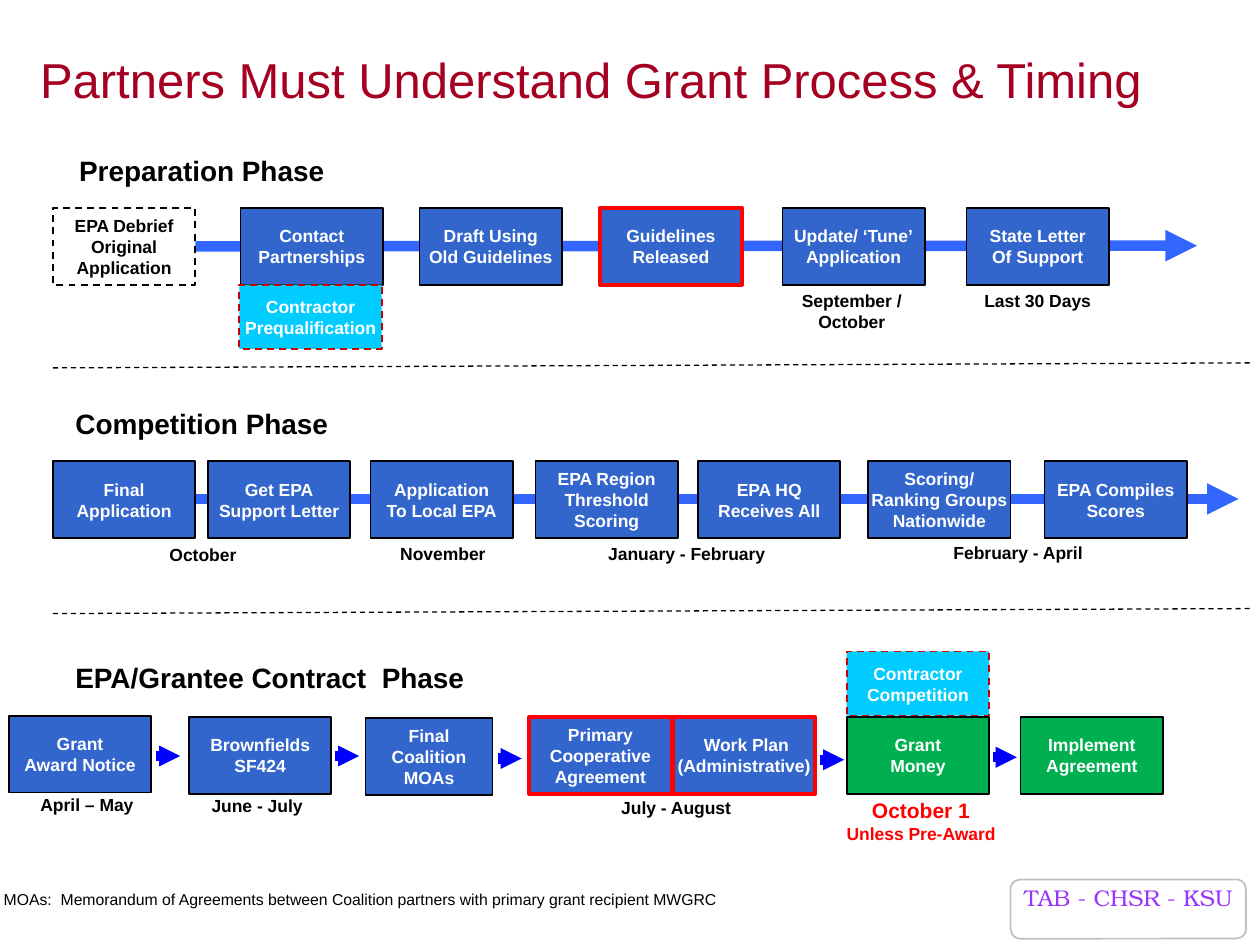
from pptx import Presentation
from pptx.dml.color import RGBColor
from pptx.enum.dml import MSO_LINE
from pptx.enum.shapes import MSO_CONNECTOR, MSO_SHAPE
from pptx.enum.text import MSO_ANCHOR, MSO_AUTO_SIZE, PP_ALIGN
from pptx.oxml.ns import qn
from pptx.util import Inches, Pt
from lxml.etree import SubElement

BLACK = RGBColor(0x00, 0x00, 0x00)
WHITE = RGBColor(0xFF, 0xFF, 0xFF)
BLUE = RGBColor(0x33, 0x66, 0xCC)
GREEN = RGBColor(0x00, 0xB0, 0x50)
CYAN = RGBColor(0x00, 0xCC, 0xFF)
RED = RGBColor(0xFF, 0x00, 0x00)
DARK_RED = RGBColor(0xCC, 0x00, 0x00)
CRIMSON = RGBColor(0xA5, 0x00, 0x21)
TIMELINE_BLUE = RGBColor(0x33, 0x66, 0xFF)
ARROW_BLUE = RGBColor(0x00, 0x00, 0xFF)
SILVER = RGBColor(0xC0, 0xC0, 0xC0)
PURPLE = RGBColor(0x99, 0x33, 0xFF)

deck = Presentation()
deck.slide_width, deck.slide_height = Inches(10), Inches(7.5)
page = deck.slides.add_slide(deck.slide_layouts[6])

# Grid of 100 columns by 75 rows
COLUMN = deck.slide_width / 100
ROW = deck.slide_height / 75


def write(shape, text, size, color, bold=True, align=PP_ALIGN.CENTER, font="Arial"):
    """Put text in a shape: \n starts a paragraph, \v breaks a line."""
    frame = shape.text_frame
    frame.word_wrap = False
    for number, paragraph_text in enumerate(text.split("\n")):
        para = frame.add_paragraph() if number else frame.paragraphs[0]
        para.alignment = align
        for part, words in enumerate(paragraph_text.split("\v")):
            if part:
                para.add_line_break()
            span = para.add_run()
            span.text = words
            span.font.name, span.font.size, span.font.bold = font, Pt(size), bold
            span.font.color.rgb = color
    return frame


def add_line(x1, y1, x2, y2, color, width, head="med"):
    """Draw a solid arrow with a head of the given size, or a dashed line without one."""
    line = page.shapes.add_connector(
        MSO_CONNECTOR.STRAIGHT, int(x1 * COLUMN), int(y1 * ROW), int(x2 * COLUMN), int(y2 * ROW))
    line.line.color.rgb, line.line.width = color, Pt(width)
    if head:
        SubElement(line.line._get_or_add_ln(), qn("a:tailEnd"), type="triangle", w=head, len=head)
    else:
        line.line.dash_style = MSO_LINE.DASH
    SubElement(line._element.spPr, qn("a:effectLst"))
    return line


# Footer frame
footer = page.shapes.add_shape(
    MSO_SHAPE.ROUNDED_RECTANGLE, int(80.2 * COLUMN), int(69.8 * ROW), int(18.7 * COLUMN), int(4.7 * ROW))
footer.shadow.inherit = False
footer.fill.solid()
footer.fill.fore_color.rgb = WHITE
footer.line.color.rgb, footer.line.width = SILVER, Pt(1)

# Timelines behind the steps, and phase dividers
preparation_line = add_line(15.5, 19.5, 95, 19.5, TIMELINE_BLUE, 6)
add_line(13.3, 39.6, 98.3, 39.6, TIMELINE_BLUE, 6)
for divider_row in (29.2, 48.7):
    add_line(4.2, divider_row, 99.2, divider_row - 0.4, BLACK, 0.75, head=None)

# Short arrows between contract steps
for arrow_column, arrow_row in ((12.4, 60), (26.6, 60), (39.5, 60.2), (65.1, 60.3), (78.8, 60.1)):
    add_line(arrow_column, arrow_row, arrow_column + 1.9, arrow_row, ARROW_BLUE, 6, head="sm")

# Steps: style gives fill, outline, outline width, dashed, text colour, height
STEP_WIDTH = 11.3
STYLES = {
    "debrief": (None, BLACK, 1, True, BLACK, 6.1),
    "step": (BLUE, BLACK, 1, False, WHITE, 6.1),
    "key": (BLUE, RED, 2.25, False, WHITE, 6.1),
    "award": (GREEN, BLACK, 1, False, WHITE, 6.1),
    "contractor": (CYAN, DARK_RED, 1, True, WHITE, 5.1),
}
STEPS = [
    # Preparation
    (4.2, 16.5, "debrief", "EPA Debrief\nOriginal\nApplication"),
    (19.1, 16.5, "step", "Contact\vPartnerships"),
    (33.3, 16.5, "step", "Draft Using\nOld Guidelines"),
    (47.6, 16.5, "key", "Guidelines\nReleased"),
    (62.1, 16.5, "step", "Update/ ‘Tune’\nApplication"),
    (76.7, 16.5, "step", "State Letter\nOf Support"),
    (19, 22.6, "contractor", "Contractor\nPrequalification"),
    # Competition
    (4.2, 36.6, "step", "Final\nApplication"),
    (16.5, 36.6, "step", "Get EPA\vSupport Letter"),
    (29.4, 36.6, "step", "Application\nTo Local EPA"),
    (42.5, 36.6, "step", "EPA Region\nThreshold\nScoring"),
    (55.4, 36.6, "step", "EPA HQ\nReceives All"),
    (68.9, 36.6, "step", "Scoring/\nRanking Groups\nNationwide"),
    (82.9, 36.6, "step", "EPA Compiles\nScores"),
    # Contract
    (0.7, 56.8, "step", "Grant\nAward Notice"),
    (15, 56.9, "step", "Brownfields\nSF424"),
    (29, 57, "step", "Final\nCoalition\nMOAs"),
    (42, 56.9, "key", "Primary\nCooperative\nAgreement"),
    (53.4, 56.9, "key", " Work Plan\n(Administrative)"),
    (67.2, 56.9, "award", "Grant\nMoney"),
    (81, 56.9, "award", "Implement\nAgreement"),
    (67.2, 51.7, "contractor", "Contractor\nCompetition"),
]
for left, top, style, text in STEPS:
    fill, outline, outline_width, dashed, color, height = STYLES[style]
    width = 10.1 if text.endswith("MOAs") else STEP_WIDTH
    box = page.shapes.add_shape(
        MSO_SHAPE.RECTANGLE, int(left * COLUMN), int(top * ROW), int(width * COLUMN), int(height * ROW))
    box.shadow.inherit = False
    if fill is None:
        box.fill.background()
    else:
        box.fill.solid()
        box.fill.fore_color.rgb = fill
    box.line.color.rgb, box.line.width = outline, Pt(outline_width)
    if dashed:
        box.line.dash_style = MSO_LINE.DASH
    write(box, text, 10, color).vertical_anchor = MSO_ANCHOR.MIDDLE
    if style == "debrief":
        preparation_line.begin_connect(box, 3)

# Dates under the steps
DATES = [
    (62.6, 22.5, 10, 4.4, "September /\vOctober"),
    (77.1, 22.5, 10.5, 2.7, "Last 30 Days"),
    (12.4, 42.7, 7.4, 2.7, "October"),
    (27.8, 42.6, 14.7, 2.7, "November"),
    (47.2, 42.6, 14.6, 2.7, "January - February"),
    (74.6, 42.5, 12.4, 2.7, "February - April"),
    (2.2, 62.5, 9.4, 2.7, "April – May"),
    (15.8, 62.6, 9.2, 2.7, "June - July"),
    (48.2, 62.8, 10.9, 2.7, "July - August"),
]
LEFT, CENTER = PP_ALIGN.LEFT, PP_ALIGN.CENTER
LABELS = [(*date, 10, BLACK, True, CENTER, "Arial") for date in DATES] + [
    # Phase headings
    (5.3, 11.7, 21.5, 3.7, "Preparation Phase", 16, BLACK, True, LEFT, "Arial"),
    (5, 31.8, 22.1, 3.7, "Competition Phase", 16, BLACK, True, LEFT, "Arial"),
    (5, 51.9, 34, 3.7, "EPA/Grantee Contract  Phase", 16, BLACK, True, LEFT, "Arial"),
    # Award date, footer and title
    (66.1, 62.8, 14, 4.7, "October 1\nUnless Pre-Award", 12, RED, True, CENTER, "Arial"),
    (80.2, 70.1, 18.7, 2.8, "TAB - CHSR - KSU", 13, PURPLE, False, CENTER, "TeX Gyre Bonum"),
    (2.2, 0, 97.8, 12.5, "Partners Must Understand Grant Process & Timing",
     28, CRIMSON, False, LEFT, "Arial"),
]
for left, top, width, height, text, size, color, bold, align, font in LABELS:
    label = page.shapes.add_textbox(
        int(left * COLUMN), int(top * ROW), int(width * COLUMN), int(height * ROW))
    frame = write(label, text, size, color, bold, align, font)
    if color == CRIMSON:
        frame.word_wrap = True
        frame.vertical_anchor = MSO_ANCHOR.MIDDLE
    else:
        frame.auto_size = MSO_AUTO_SIZE.SHAPE_TO_FIT_TEXT
    if color == PURPLE:
        frame.word_wrap = True
        frame.paragraphs[0].line_spacing = 0.8
    if color == RED:
        frame.paragraphs[1].runs[0].font.size = Pt(10)

# Footnote, starting at the slide's left edge
footnote = page.shapes.add_textbox(0, int(70.1 * ROW), int(60 * COLUMN), int(2.5 * ROW))
footnote_frame = write(
    footnote, "MOAs:  Memorandum of Agreements between Coalition partners "
    "with primary grant recipient MWGRC", 9, BLACK, False, LEFT)
footnote_frame.word_wrap = True
footnote_frame.margin_left = int(0.3 * COLUMN)

deck.save("out.pptx")
